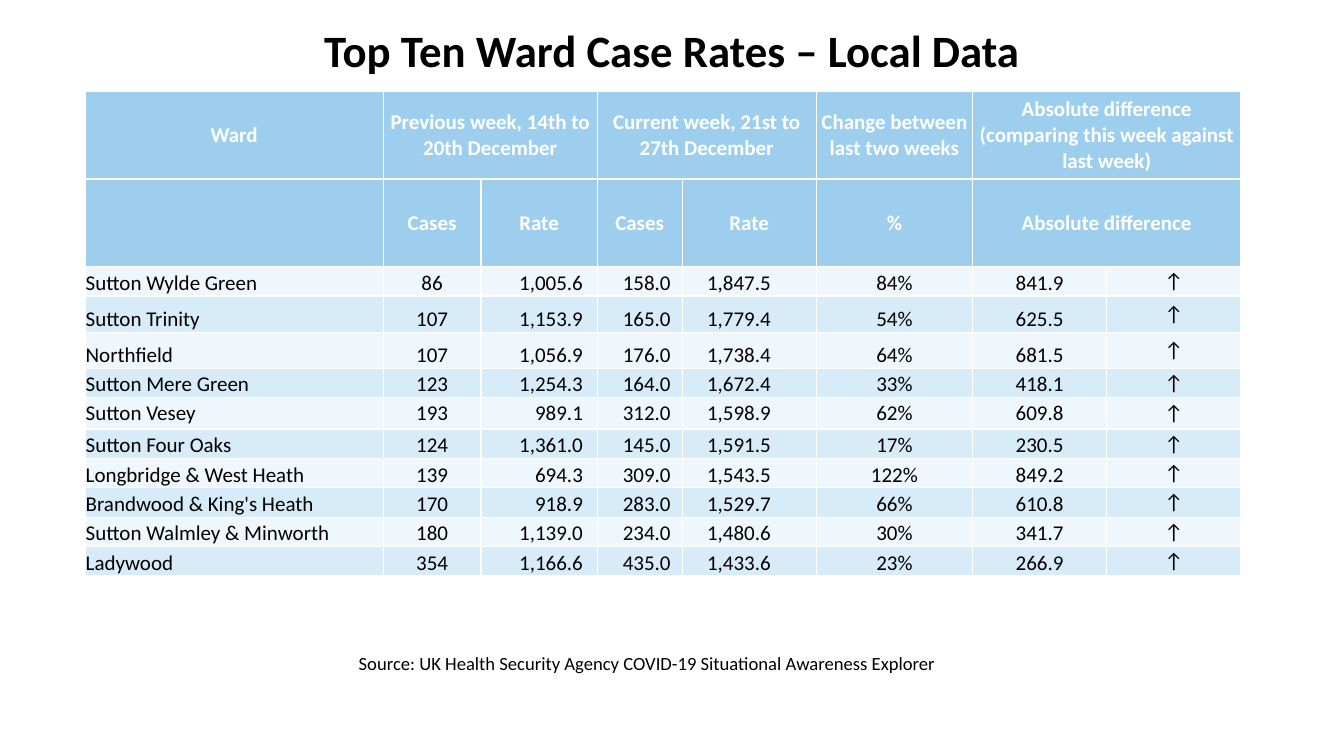
from lxml.etree import SubElement
from pptx import Presentation
from pptx.dml.color import RGBColor
from pptx.enum.text import MSO_ANCHOR, MSO_AUTO_SIZE, PP_ALIGN
from pptx.oxml.ns import qn
from pptx.util import Cm, Pt

COLORS = {
    "text": "000000",
    "white": "FFFFFF",
    "header": "9DCEED",
    "light": "EFF6FC",
    "dark": "D8EBF8",
}
FONT = "Calibri"
COLUMN_WIDTHS = [7.52, 2.46, 2.93, 2.14, 3.38, 3.94, 3.38, 3.38]
HEADER_HEIGHT = 2.21
WARD_HEIGHT = 0.74
TALLER_ROWS = {"Sutton Trinity": 0.91, "Northfield": 0.91, "Sutton Vesey": 0.79}
HEADERS = [
    ["Ward", "Previous week, 14th to 20th December", "",
     "Current week, 21st to 27th December", "", "Change between last two weeks",
     "Absolute difference (comparing this week against last week)", ""],
    ["", "Cases", "Rate", "Cases", "Rate", "%", "Absolute difference", ""],
]
MERGES = [(0, 1), (0, 3), (0, 6), (1, 6)]
WARDS = [
    ["Sutton Wylde Green", "86", "1,005.6", "158.0", "1,847.5", "84%", "841.9"],
    ["Sutton Trinity", "107", "1,153.9", "165.0", "1,779.4", "54%", "625.5"],
    ["Northfield", "107", "1,056.9", "176.0", "1,738.4", "64%", "681.5"],
    ["Sutton Mere Green", "123", "1,254.3", "164.0", "1,672.4", "33%", "418.1"],
    ["Sutton Vesey", "193", "989.1", "312.0", "1,598.9", "62%", "609.8"],
    ["Sutton Four Oaks", "124", "1,361.0", "145.0", "1,591.5", "17%", "230.5"],
    ["Longbridge & West Heath", "139", "694.3", "309.0", "1,543.5", "122%", "849.2"],
    ["Brandwood & King's Heath", "170", "918.9", "283.0", "1,529.7", "66%", "610.8"],
    ["Sutton Walmley & Minworth", "180", "1,139.0", "234.0", "1,480.6", "30%", "341.7"],
    ["Ladywood", "354", "1,166.6", "435.0", "1,433.6", "23%", "266.9"],
]
ARROW = "↑"
ARROW_COLUMN = 7
ALIGNMENTS = {0: PP_ALIGN.LEFT, 2: PP_ALIGN.RIGHT, 3: PP_ALIGN.RIGHT, 4: PP_ALIGN.LEFT}
LEFT_MARGINS = {4: 0.63}
RIGHT_MARGINS = {2: 0.36, 3: 0.29}
CELL_MARGIN = 0.02


def write_text(frame, text, size=15, color="text", bold=False, align=PP_ALIGN.LEFT):
    paragraph = frame.paragraphs[0]
    paragraph.alignment = align
    run = paragraph.add_run()
    run.text = text
    run.font.name = FONT
    run.font.size = Pt(size)
    run.font.bold = bold
    run.font.color.rgb = RGBColor.from_string(COLORS[color])


def add_title(slide, text):
    title = slide.shapes.title
    title.left, title.top, title.width, title.height = Cm(0), Cm(0.46), Cm(33.87), Cm(1.6)
    frame = title.text_frame
    frame.auto_size = MSO_AUTO_SIZE.NONE
    frame.vertical_anchor = MSO_ANCHOR.MIDDLE
    write_text(frame, text, size=32, bold=True, align=PP_ALIGN.CENTER)


def add_source(slide, text):
    box = slide.shapes.add_textbox(Cm(8.79), Cm(16.31), Cm(21.26), Cm(0.84))
    frame = box.text_frame
    frame.word_wrap = True
    frame.auto_size = MSO_AUTO_SIZE.SHAPE_TO_FIT_TEXT
    write_text(frame, text, size=13.3)


def style_cell(cell, fill, anchor, left=CELL_MARGIN, right=CELL_MARGIN):
    properties = cell._tc.get_or_add_tcPr()
    for side in ("a:lnL", "a:lnR", "a:lnT", "a:lnB"):
        line = SubElement(properties, qn(side), w=str(Pt(1)))
        SubElement(SubElement(line, qn("a:solidFill")), qn("a:srgbClr"), val=COLORS["white"])
    cell.fill.solid()
    cell.fill.fore_color.rgb = RGBColor.from_string(COLORS[fill])
    cell.vertical_anchor = anchor
    cell.margin_left, cell.margin_right = Cm(left), Cm(right)
    cell.margin_top, cell.margin_bottom = Cm(CELL_MARGIN), Cm(0)


def fill_header(table, row, labels):
    for column, label in enumerate(labels):
        cell = table.cell(row, column)
        style_cell(cell, "header", MSO_ANCHOR.MIDDLE)
        if label:
            write_text(cell.text_frame, label, color="white", bold=True, align=PP_ALIGN.CENTER)


def fill_ward(table, row, values):
    fill = "dark" if row % 2 else "light"
    for column, value in enumerate(values + [ARROW]):
        centred = column == ARROW_COLUMN or values[0] == "Sutton Vesey"
        cell = table.cell(row, column)
        style_cell(cell, fill, MSO_ANCHOR.MIDDLE if centred else MSO_ANCHOR.BOTTOM,
                   left=LEFT_MARGINS.get(column, CELL_MARGIN),
                   right=RIGHT_MARGINS.get(column, CELL_MARGIN))
        write_text(cell.text_frame, value, align=ALIGNMENTS.get(column, PP_ALIGN.CENTER))


def add_ward_table(slide):
    heights = [HEADER_HEIGHT] * len(HEADERS)
    heights += [TALLER_ROWS.get(ward[0], WARD_HEIGHT) for ward in WARDS]
    table = slide.shapes.add_table(
        len(heights), len(COLUMN_WIDTHS), Cm(2.14), Cm(2.3),
        Cm(sum(COLUMN_WIDTHS)), Cm(sum(heights))).table
    for column, width in zip(table.columns, COLUMN_WIDTHS):
        column.width = Cm(width)
    for row, height in zip(table.rows, heights):
        row.height = Cm(height)
    for row, labels in enumerate(HEADERS):
        fill_header(table, row, labels)
    for row, values in enumerate(WARDS, start=len(HEADERS)):
        fill_ward(table, row, values)
    for row, column in MERGES:
        table.cell(row, column).merge(table.cell(row, column + 1))


def main():
    presentation = Presentation()
    presentation.slide_width, presentation.slide_height = Cm(33.87), Cm(19.05)
    slide = presentation.slides.add_slide(presentation.slide_layouts[5])
    add_title(slide, "Top Ten Ward Case Rates – Local Data")
    add_source(slide, "Source: UK Health Security Agency COVID-19 Situational Awareness Explorer")
    add_ward_table(slide)
    presentation.save("out.pptx")


if __name__ == "__main__":
    main()
